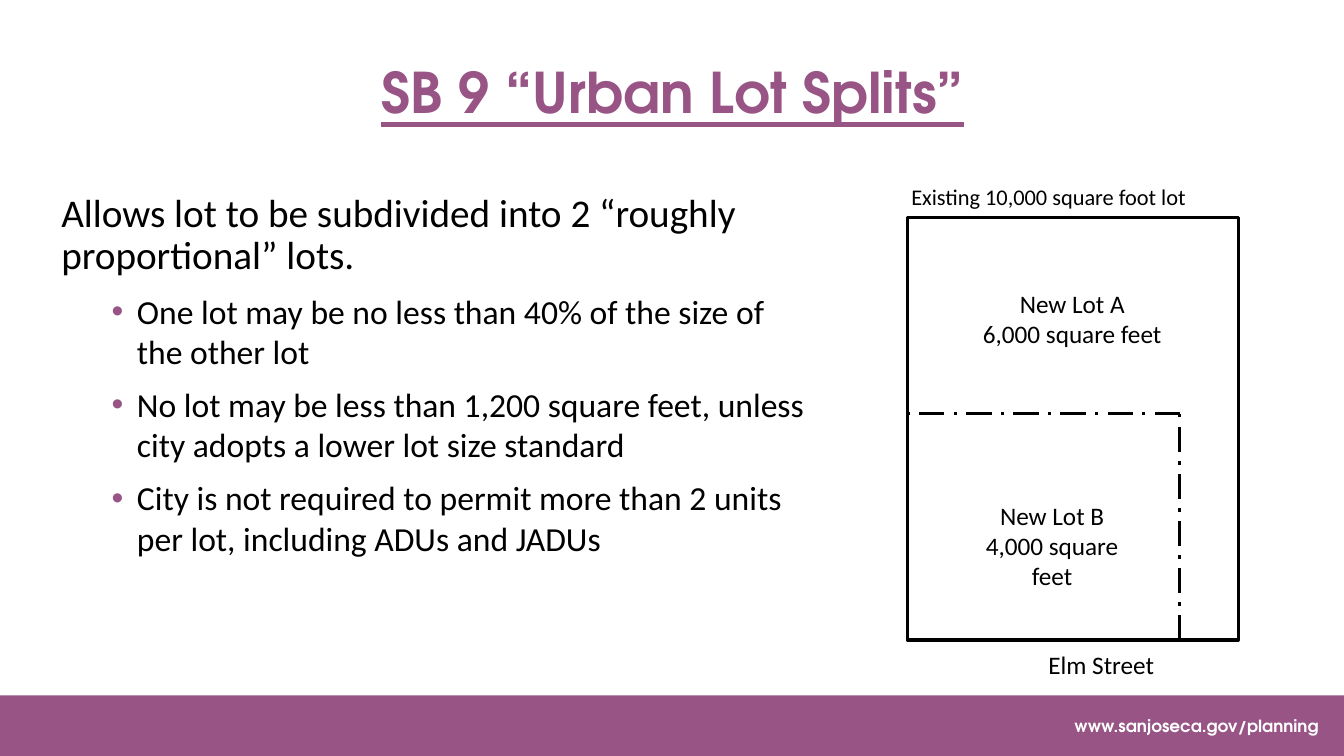
from dataclasses import dataclass

from lxml import etree
from pptx import Presentation
from pptx import util as u
from pptx.dml.color import RGBColor
from pptx.enum import dml, shapes, text
from pptx.oxml import ns


@dataclass(frozen=True)
class Theme:
    plum: RGBColor = RGBColor(0x97, 0x54, 0x85)
    black: RGBColor = RGBColor(0, 0, 0)
    white: RGBColor = RGBColor(255, 255, 255)
    heading_font: str = "TeX Gyre Adventor"
    body_font: str = "Calibri"
    title_size: int = 40
    lead_size: int = 28
    bullet_size: int = 24
    lot_size: int = 18
    caption_size: int = 16
    footer_size: int = 12
    line_width: float = 2.25


THEME = Theme()
LEFT, CENTER, RIGHT = text.PP_ALIGN.LEFT, text.PP_ALIGN.CENTER, text.PP_ALIGN.RIGHT


def add_text_box(page, left, top, width, height, anchor=text.MSO_ANCHOR.TOP):
    box = page.shapes.add_textbox(*map(u.Inches, (left, top, width, height)))
    box.text_frame.word_wrap = True
    box.text_frame.vertical_anchor = anchor
    return box.text_frame


def add_span(para, words, size, color=THEME.black, font=THEME.body_font, bold=False):
    span = para.add_run()
    span.text = words
    span.font.name = font
    span.font.size = u.Pt(size)
    span.font.bold = bold
    span.font.color.rgb = color
    return span


def add_label(page, place, lines, size, align=LEFT, **look):
    frame = add_text_box(page, *place)
    for index, words in enumerate(lines):
        para = frame.add_paragraph() if index else frame.paragraphs[0]
        para.alignment = align
        add_span(para, words, size, **look)


def add_bullet(frame, words):
    para = frame.add_paragraph()
    para.level = 1
    para.space_before = u.Pt(9)
    add_span(para, words, THEME.bullet_size)
    properties = para._p.get_or_add_pPr()
    properties.set("marL", str(u.Inches(0.75)))
    properties.set("indent", str(u.Inches(-0.25)))
    color = etree.SubElement(properties, ns.qn("a:buClr"))
    etree.SubElement(color, ns.qn("a:srgbClr")).set("val", str(THEME.plum))
    etree.SubElement(properties, ns.qn("a:buFont")).set("typeface", "Arial")
    etree.SubElement(properties, ns.qn("a:buChar")).set("char", "•")


def add_rectangle(page, left, top, width, height, fill, outline=None):
    box = page.shapes.add_shape(
        shapes.MSO_SHAPE.RECTANGLE, *map(u.Inches, (left, top, width, height)))
    box.shadow.inherit = False
    box.fill.solid()
    box.fill.fore_color.rgb = fill
    if outline is None:
        box.line.fill.background()
    else:
        box.line.color.rgb = outline
        box.line.width = u.Pt(THEME.line_width)


def add_split_line(page, start, end):
    line = page.shapes.add_connector(
        shapes.MSO_CONNECTOR.STRAIGHT, *map(u.Inches, (*start, *end)))
    line.line.color.rgb = THEME.black
    line.line.width = u.Pt(THEME.line_width)
    line.line.dash_style = dml.MSO_LINE.LONG_DASH_DOT
    etree.SubElement(line._element.spPr, ns.qn("a:effectLst"))


def add_title(page):
    frame = add_text_box(page, 0.92, 0.42, 11.5, 1.05, text.MSO_ANCHOR.MIDDLE)
    para = frame.paragraphs[0]
    para.alignment = CENTER
    para.line_spacing = 0.9
    span = add_span(para, "SB 9 “Urban Lot Splits”", THEME.title_size,
                    THEME.plum, THEME.heading_font, bold=True)
    span.font.underline = True


def add_rules(page):
    frame = add_text_box(page, 0.51, 1.87, 7.62, 4.76)
    lead = frame.paragraphs[0]
    lead.line_spacing = 0.9
    lead.space_before = u.Pt(10)
    add_span(lead, "Allows lot to be subdivided into 2 “roughly proportional” lots.",
             THEME.lead_size)
    for words in (
        "One lot may be no less than 40% of the size of the other lot",
        "No lot may be less than 1,200 square feet, unless city adopts a lower lot size standard",
        "City is not required to permit more than 2 units per lot, including ADUs and JADUs",
    ):
        add_bullet(frame, words)


def add_footer(page):
    add_rectangle(page, 0, 6.9, 13.33, 0.6, THEME.plum)
    add_label(page, (10.05, 7.05, 3.13, 0.3), ["www.sanjoseca.gov/planning"],
              THEME.footer_size, RIGHT, color=THEME.white,
              font=THEME.heading_font, bold=True)


def add_lot_plan(page):
    left, top, width, height = 9, 2.16, 3.28, 4.19
    corner = (11.7, 4.1)
    add_rectangle(page, left, top, width, height, THEME.white, THEME.black)
    # The split runs from the street to the corner, then to the left edge
    add_split_line(page, (corner[0], top + height), corner)
    add_split_line(page, corner, (left, corner[1]))
    # Lot names and captions
    add_label(page, (9.46, 2.81, 2.35, 0.63), ["New Lot A", "6,000 square feet"],
              THEME.lot_size, CENTER)
    add_label(page, (9.56, 4.91, 1.75, 0.63), ["New Lot B", "4,000 square feet"],
              THEME.lot_size, CENTER)
    add_label(page, (10.3, 6.39, 2.36, 0.36), ["Elm Street"], THEME.lot_size)
    add_label(page, (8.94, 1.77, 3.14, 0.37), ["Existing 10,000 square foot lot"],
              THEME.caption_size)


def main():
    deck = Presentation()
    deck.slide_width, deck.slide_height = u.Inches(13.33), u.Inches(7.5)
    page = deck.slides.add_slide(deck.slide_layouts[6])
    add_title(page)
    add_rules(page)
    add_footer(page)
    add_lot_plan(page)
    deck.save("out.pptx")


if __name__ == "__main__":
    main()
